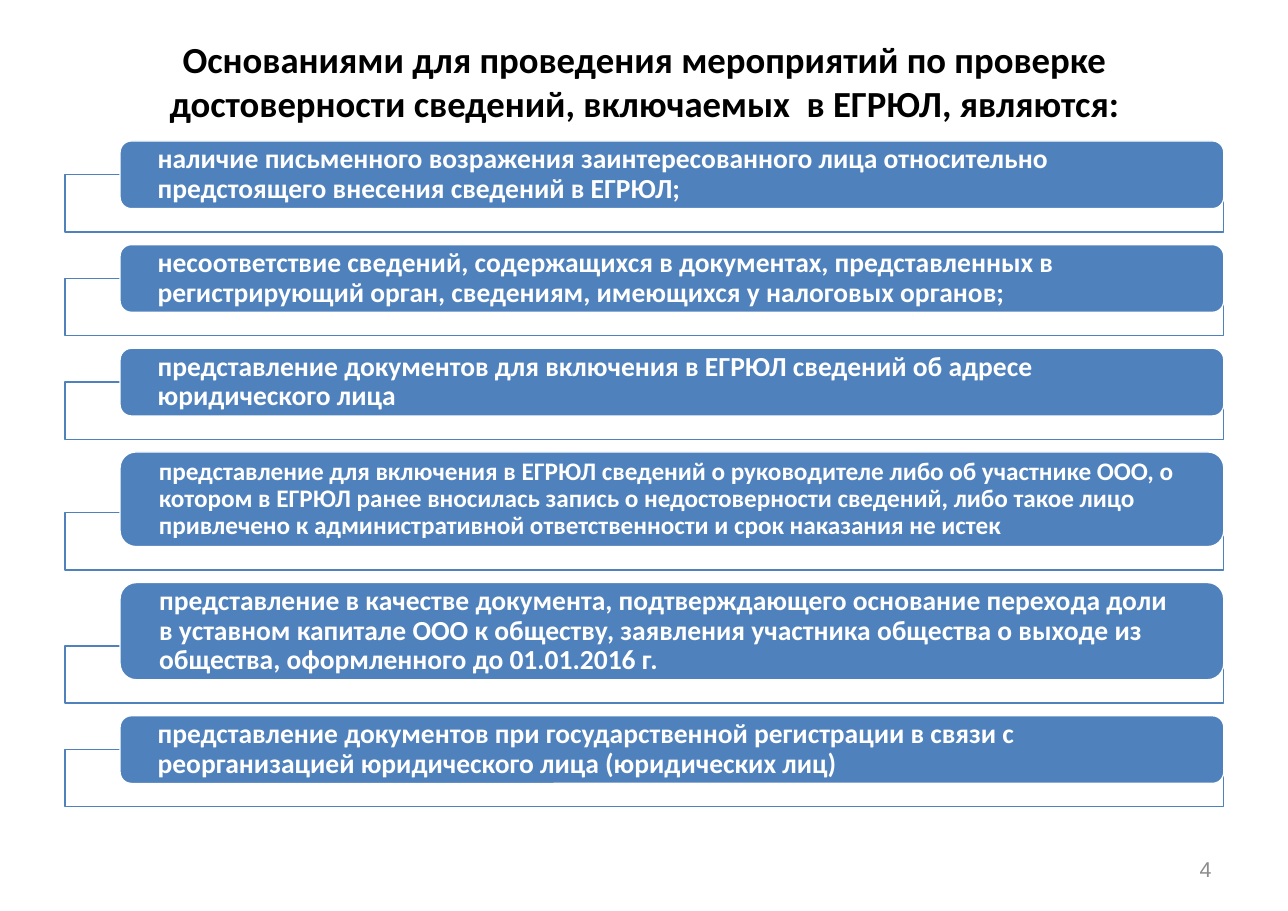
from lxml import etree
from pptx import Presentation
from pptx import util as u
from pptx.dml import color
from pptx.enum import shapes, text
from pptx.oxml import ns

BLUE, WHITE, BLACK, GREY = "4F81BD", "FFFFFF", "000000", "8C8C8C"
LEFT, WIDTH = 1.5, 26.72
BAR_LEFT, BAR_WIDTH = 2.77, 25.45
FRAME_HEIGHT, OVERLAP, GAP = 1.32, 0.78, 0.83


def rgb(value):
    return color.RGBColor.from_string(value)


def write(shape, words, insets, alignment, font_values, font_color):
    frame = shape.text_frame
    frame.word_wrap = True
    frame.auto_size = text.MSO_AUTO_SIZE.NONE
    frame.vertical_anchor = text.MSO_ANCHOR.MIDDLE
    frame.margin_left = frame.margin_right = u.Cm(insets[0])
    frame.margin_top = frame.margin_bottom = u.Cm(insets[1])
    paragraph = frame.paragraphs[0]
    paragraph.alignment = alignment
    run = paragraph.add_run()
    run.text = words
    for name, value in font_values.items():
        setattr(run.font, name, value)
    run.font.color.rgb = rgb(font_color)
    return paragraph


grounds = [
    (1.56, 18, "наличие письменного возражения заинтересованного лица относительно "
     "предстоящего внесения сведений в ЕГРЮЛ;"),
    (1.56, 18, "несоответствие сведений, содержащихся в документах, представленных в "
     "регистрирующий орган, сведениям, имеющихся у налоговых органов;"),
    (1.56, 18, "представление документов для включения в ЕГРЮЛ сведений об адресе "
     "юридического лица"),
    (2.18, 16.5, "представление для включения в ЕГРЮЛ сведений о руководителе либо об "
     "участнике ООО, о котором в ЕГРЮЛ ранее вносилась запись о недостоверности "
     "сведений, либо такое лицо привлечено к административной ответственности "
     "и срок наказания не истек"),
    (2.24, 18, "представление в качестве документа, подтверждающего основание перехода "
     "доли в уставном капитале ООО к обществу, заявления участника общества "
     "о выходе из общества, оформленного до 01.01.2016 г."),
    (1.56, 18, "представление документов при государственной регистрации в связи с "
     "реорганизацией юридического лица (юридических лиц)"),
]

presentation = Presentation()
presentation.slide_width = u.Cm(29.7)
presentation.slide_height = u.Cm(21)
slide = presentation.slides.add_slide(presentation.slide_layouts[5])

title = slide.shapes.title
title_place = {"left": LEFT, "top": 0.84, "width": WIDTH, "height": 2.06}
for name, value in title_place.items():
    setattr(title, name, u.Cm(value))
write(title, "Основаниями для проведения мероприятий по проверке достоверности сведений, "
      "включаемых  в ЕГРЮЛ, являются:", (0.28, 0.15), text.PP_ALIGN.CENTER,
      {"name": "Calibri", "size": u.Pt(24), "bold": True}, BLACK)

top = 3.25
for height, size, words in grounds:
    bottom = top + height
    frame_box = slide.shapes.add_shape(
        shapes.MSO_SHAPE.RECTANGLE, u.Cm(LEFT), u.Cm(bottom - OVERLAP),
        u.Cm(WIDTH), u.Cm(FRAME_HEIGHT))
    bar = slide.shapes.add_shape(
        shapes.MSO_SHAPE.ROUNDED_RECTANGLE, u.Cm(BAR_LEFT), u.Cm(top),
        u.Cm(BAR_WIDTH), u.Cm(height))
    for shape, fill, line in ((frame_box, WHITE, BLUE), (bar, BLUE, WHITE)):
        shape.shadow.inherit = False
        shape.fill.solid()
        shape.fill.fore_color.rgb = rgb(fill)
        shape.line.color.rgb = rgb(line)
        shape.line.width = u.Pt(0.85)
    frame_color = frame_box.element.spPr.find(ns.qn("a:solidFill"))[0]
    etree.SubElement(frame_color, ns.qn("a:alpha")).set("val", "90000")
    paragraph = write(bar, words, (0.79, 0.08), text.PP_ALIGN.LEFT,
                      {"name": "Calibri", "size": u.Pt(size), "bold": True}, WHITE)
    paragraph.line_spacing = 0.9
    top = bottom + GAP

page_number = slide.shapes.add_textbox(u.Cm(21.29), u.Cm(19.46), u.Cm(6.93), u.Cm(1.12))
write(page_number, "4", (0.28, 0.15), text.PP_ALIGN.RIGHT,
      {"name": "Arial", "size": u.Pt(14)}, GREY)

presentation.save("out.pptx")
